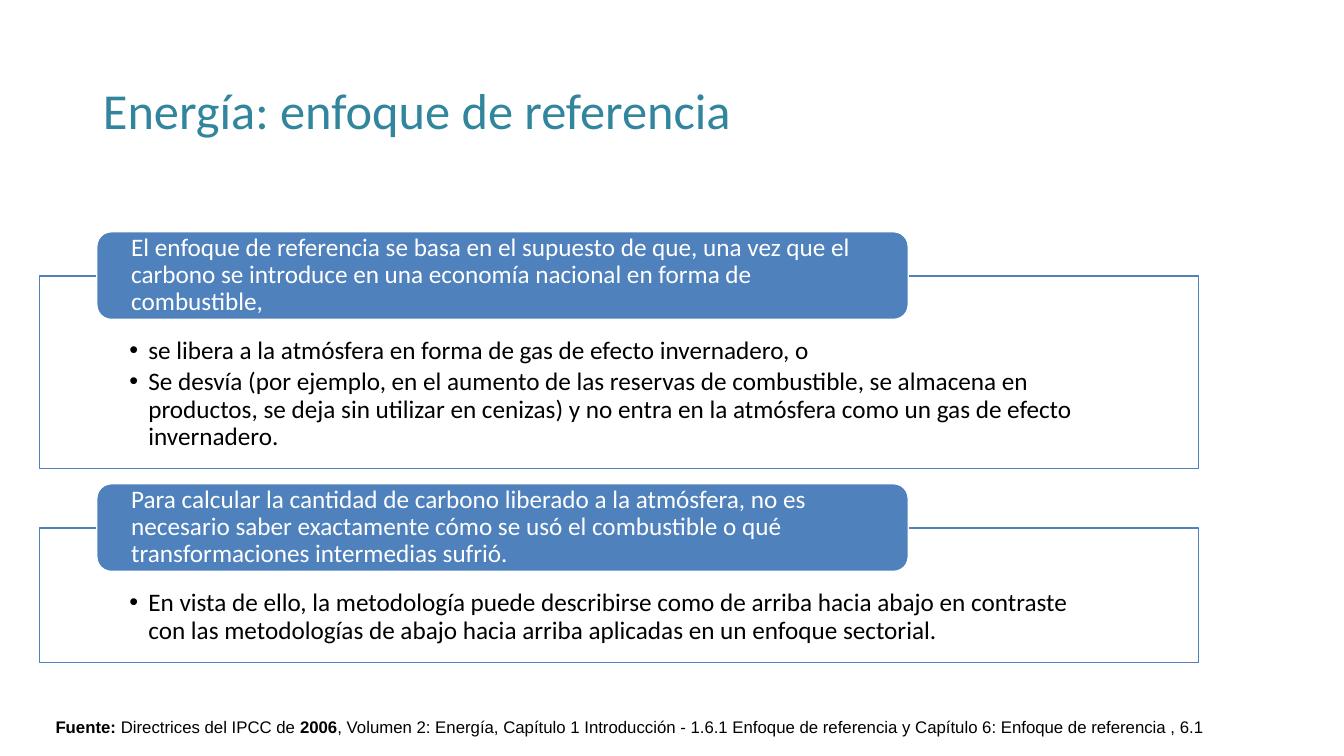
from lxml.etree import SubElement
from pptx import Presentation
from pptx.dml.color import RGBColor
from pptx.enum.shapes import MSO_SHAPE as Preset
from pptx.enum.text import MSO_ANCHOR as Anchor, PP_ALIGN as Align
from pptx.oxml.ns import qn
from pptx.util import Cm, Pt

COLORS = {
    "title": "31859C",
    "blue": "4F81BD",
    "white": "FFFFFF",
    "black": "000000",
}

SECTIONS = [
    (
        "El enfoque de referencia se basa en el supuesto de que, una vez que el carbono "
        "se introduce en una economía nacional en forma de combustible,",
        [
            "se libera a la atmósfera en forma de gas de efecto invernadero, o",
            "Se desvía (por ejemplo, en el aumento de las reservas de combustible, se almacena "
            "en productos, se deja sin utilizar en cenizas) y no entra en la atmósfera como un "
            "gas de efecto invernadero.",
        ],
        4.85,
    ),
    (
        "Para calcular la cantidad de carbono liberado a la atmósfera, no es necesario saber "
        "exactamente cómo se usó el combustible o qué transformaciones intermedias sufrió.",
        [
            "En vista de ello, la metodología puede describirse como de arriba hacia abajo en "
            "contraste con las metodologías de abajo hacia arriba aplicadas en un enfoque sectorial.",
        ],
        3.38,
    ),
]

SOURCE = [
    ("Fuente: ", True),
    ("Directrices del IPCC de", False),
    (" 2006", True),
    (", Volumen 2: Energía, Capítulo 1 Introducción - 1.6.1 Enfoque de referencia y "
     "Capítulo 6: Enfoque de referencia , 6.1", False),
]


def style_font(font, name, size, color):
    font.name = name
    font.size = Pt(size)
    font.color.rgb = RGBColor.from_string(COLORS[color])


def add_panel(page, preset, place, fill, line, insets):
    panel = page.shapes.add_shape(preset, *[Cm(length) for length in place])
    panel.shadow.inherit = False
    panel.fill.solid()
    panel.fill.fore_color.rgb = RGBColor.from_string(COLORS[fill])
    panel.line.color.rgb = RGBColor.from_string(COLORS[line])
    panel.line.width = Pt(1)
    frame = panel.text_frame
    frame.word_wrap = True
    side, top, bottom = insets
    frame.margin_left = frame.margin_right = Cm(side)
    frame.margin_top, frame.margin_bottom = Cm(top), Cm(bottom)
    return panel


deck = Presentation()
deck.slide_width, deck.slide_height = Cm(33.87), Cm(19.05)
page = deck.slides.add_slide(deck.slide_layouts[5])

title = page.shapes.title
title.left, title.top, title.width, title.height = Cm(2.34), Cm(1.02), Cm(29.21), Cm(3.68)
title.text_frame.text = "Energía: enfoque de referencia"
title.text_frame.vertical_anchor = Anchor.MIDDLE
heading = title.text_frame.paragraphs[0]
heading.alignment = Align.LEFT
heading.line_spacing = 0.9
style_font(heading.runs[0].font, "Calibri", 36, "title")

body_top = 6.96
for statement, points, body_height in SECTIONS:
    body = add_panel(page, Preset.RECTANGLE, (0.99, body_top, 29.21, body_height),
                     "white", "blue", (2.27, 1.56, 0.36))
    color = body.fill._xPr.find(qn("a:solidFill"))[0]
    SubElement(color, qn("a:alpha"), val="90000")
    body.text_frame.vertical_anchor = Anchor.TOP
    body.text_frame.text = "\n".join(points)
    for para in body.text_frame.paragraphs:
        properties = para._p.get_or_add_pPr()
        properties.set("marL", str(Cm(0.48)))
        properties.set("indent", str(-Cm(0.48)))
        SubElement(properties, qn("a:buFont"), typeface="Arial")
        SubElement(properties, qn("a:buChar"), char="•")
        para.alignment = Align.LEFT
        para.line_spacing = 0.9
        para.space_after = Pt(2.7)
        style_font(para.runs[0].font, "Calibri", 18, "black")

    label = add_panel(page, Preset.ROUNDED_RECTANGLE, (2.44, body_top - 1.12, 20.45, 2.21),
                      "blue", "white", (0.76, 0, 0))
    label.text_frame.vertical_anchor = Anchor.MIDDLE
    label.text_frame.text = statement
    para = label.text_frame.paragraphs[0]
    para.alignment = Align.LEFT
    para.line_spacing = 0.9
    style_font(para.runs[0].font, "Calibri", 18, "white")
    body_top += body_height + 1.5

source = page.shapes.add_textbox(Cm(1.35), Cm(18.06), Cm(29.4), Cm(0.5))
frame = source.text_frame
frame.word_wrap = True
frame.margin_left = frame.margin_right = frame.margin_top = frame.margin_bottom = 0
para = frame.paragraphs[0]
para._p.get_or_add_pPr().set("marL", str(Cm(0.05)))
for words, bold in SOURCE:
    span = para.add_run()
    span.text = words
    span.font.bold = bold
    style_font(span.font, "Arial", 12, "black")

deck.save("out.pptx")
